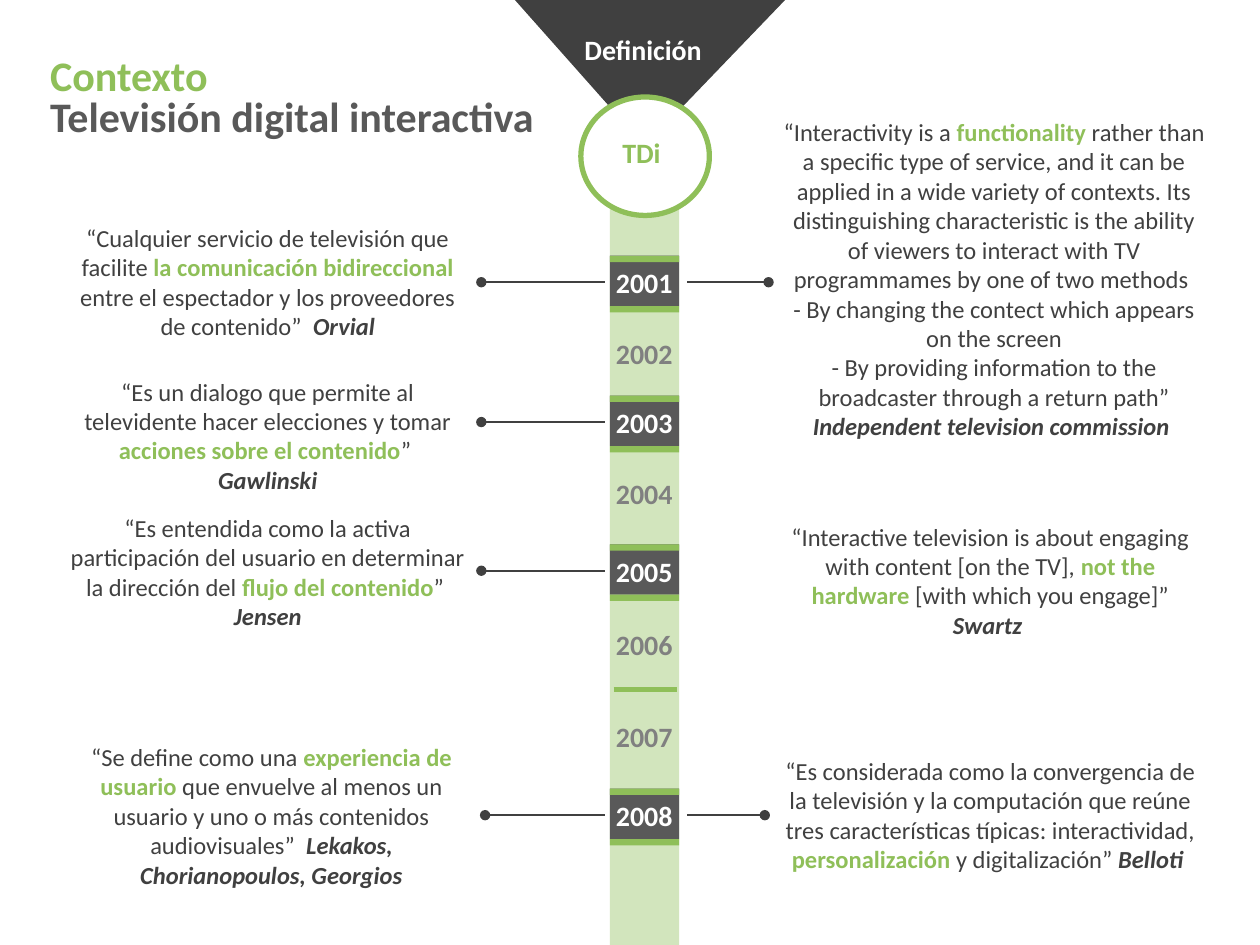
from dataclasses import dataclass
from typing import Optional

from lxml import etree
from pptx import Presentation
from pptx import util as u
from pptx.dml.color import RGBColor
from pptx.enum import shapes, text
from pptx.oxml.ns import qn

GREEN, PALE_GREEN, WHITE = "8FBF59", "D2E5BD", "FFFFFF"
DARK, MEDIUM, GRAY = "404040", "595959", "808080"
FONT = "Calibri"
BAR_LEFT, BAR_WIDTH = 4.84, 0.55
BLOCK_HEIGHT, CAP_HEIGHT = 0.4, 0.05
LEADER_OFFSET = 0.21
LEFT_LEADER_END, RIGHT_LEADER_END = 4.8, 5.45


@dataclass(frozen=True)
class Box:
    left: float
    top: float
    width: float
    height: float

    def lengths(self) -> tuple:
        return tuple(u.Inches(v) for v in (self.left, self.top, self.width, self.height))


@dataclass(frozen=True)
class Run:
    words: str
    color: str = DARK
    size: int = 14
    bold: bool = False
    italic: bool = False


@dataclass(frozen=True)
class Year:
    label: str
    top: float
    highlighted: bool = False


@dataclass(frozen=True)
class Quote:
    box: Box
    paragraphs: list[list[Run]]
    year: Optional[str] = None


def key(words: str) -> Run:
    return Run(words, GREEN, bold=True)


def author(words: str) -> Run:
    return Run(words, bold=True, italic=True)


YEARS = [
    Year("2001", 2.03, True), Year("2002", 2.59), Year("2003", 3.14, True), Year("2004", 3.7),
    Year("2005", 4.32, True), Year("2006", 4.9), Year("2007", 5.63), Year("2008", 6.26, True),
]

QUOTES = [
    Quote(Box(0.43, 1.72, 3.39, 1.04), [[
        Run("“Cualquier servicio de televisión que facilite "), key("la comunicación bidireccional "),
        Run("entre el espectador y los proveedores de contenido”  "), author("Orvial")]], "2001"),
    Quote(Box(0.43, 2.94, 3.39, 0.81), [[
        Run("“Es un dialogo que permite al televidente hacer elecciones y tomar "),
        key("acciones sobre el contenido"), Run("”  "), author("Gawlinski")]], "2003"),
    Quote(Box(0.43, 4.02, 3.39, 1.04), [[
        Run("“Es entendida como la activa participación del usuario en determinar la dirección del "),
        key("flujo del contenido"), Run("”  "), author("Jensen")]], "2005"),
    Quote(Box(0.46, 5.84, 3.39, 1.28), [[
        Run("“Se define como una "), key("experiencia de usuario "),
        Run("que envuelve al menos un usuario y uno o más contenidos audiovisuales”  "),
        author("Lekakos, Chorianopoulos, Georgios")]], "2008"),
    Quote(Box(6.1, 0.88, 3.58, 2.69), [
        [Run("“Interactivity is a "), key("functionality"),
         Run(" rather than a specific type of service, and it can be applied in a wide variety of "
             "contexts. Its distinguishing characteristic is the ability of viewers to interact "
             "with TV programmames by one of two methods ")],
        [Run("- By changing the contect which appears on the screen")],
        [Run("- By providing information to the broadcaster through a return path” "),
         author("Independent television commission ")]], "2001"),
    Quote(Box(6.07, 4.09, 3.58, 1.04), [[
        Run("“Interactive television is about engaging with content [on the TV], "),
        key("not the hardware"), Run(" [with which you engage]” "), author("Swartz ")]]),
    Quote(Box(6.07, 5.95, 3.58, 1.04), [[
        Run("“Es considerada como la convergencia de la televisión y la computación que reúne "
            "tres características típicas: interactividad, "),
        key("personalización "), Run("y digitalización” "), author("Belloti ")]], "2008"),
]


def rgb(color: str) -> RGBColor:
    return RGBColor.from_string(color)


def add_block(slide, kind, box: Box, fill: str, outline: Optional[str] = None):
    shape = slide.shapes.add_shape(kind, *box.lengths())
    shape.shadow.inherit = False
    shape.fill.solid()
    shape.fill.fore_color.rgb = rgb(fill)
    if outline:
        shape.line.color.rgb = rgb(outline)
        shape.line.width = u.Pt(3)
    else:
        shape.line.fill.background()
    return shape


def add_words(slide, box: Box, paragraphs: list[list[Run]], wrap: bool = True,
              align=text.PP_ALIGN.LEFT):
    frame = slide.shapes.add_textbox(*box.lengths()).text_frame
    frame.word_wrap = wrap
    frame.auto_size = text.MSO_AUTO_SIZE.SHAPE_TO_FIT_TEXT
    for index, runs in enumerate(paragraphs):
        paragraph = frame.add_paragraph() if index else frame.paragraphs[0]
        paragraph.alignment = align
        for item in runs:
            run = paragraph.add_run()
            run.text = item.words
            run.font.name = FONT
            run.font.size = u.Pt(item.size)
            run.font.bold = item.bold
            run.font.italic = item.italic
            run.font.color.rgb = rgb(item.color)
    return frame


def add_line(slide, kind, start: float, end: float, y: float, color: str, width: float,
             dot: bool = False) -> None:
    line = slide.shapes.add_connector(kind, *(u.Inches(v) for v in (start, y, end, y)))
    line.line.color.rgb = rgb(color)
    line.line.width = u.Pt(width)
    if dot:
        etree.SubElement(line.line._get_or_add_ln(), qn("a:headEnd"), type="oval")
    etree.SubElement(line._element.spPr, qn("a:effectLst"))


def add_header(slide) -> None:
    title = add_words(slide, Box(0.3, 0.75, 5.25, 0.39),
                      [[Run("Televisión digital interactiva", MEDIUM, 24, True)]])
    title.auto_size = text.MSO_AUTO_SIZE.NONE
    title.vertical_anchor = text.MSO_ANCHOR.MIDDLE
    title.paragraphs[0].line_spacing = 0.9
    add_words(slide, Box(0.3, 0.34, 2.1, 0.5), [[Run("Contexto", GREEN, 24, True)]])
    funnel = add_block(slide, shapes.MSO_SHAPE.ISOSCELES_TRIANGLE, Box(4.06, -0.03, 2.2, 1.19), DARK)
    funnel.adjustments[0] = 0.52
    funnel.rotation = 180
    add_block(slide, shapes.MSO_SHAPE.OVAL, Box(4.61, 0.77, 1.02, 0.94), WHITE, GREEN)
    add_words(slide, Box(4.54, 0.21, 1.15, 0.37), [[Run("Definición", WHITE, 16, True)]], False)
    add_words(slide, Box(4.84, 1.03, 0.51, 0.37), [[Run("TDi", GREEN, 16, True)]], False)


def add_year(slide, year: Year) -> None:
    rectangle = shapes.MSO_SHAPE.RECTANGLE
    if year.highlighted:
        add_block(slide, rectangle, Box(BAR_LEFT, year.top, BAR_WIDTH, BLOCK_HEIGHT), MEDIUM)
        for top in (year.top, year.top + BLOCK_HEIGHT):
            add_block(slide, rectangle, Box(BAR_LEFT, top, BAR_WIDTH, CAP_HEIGHT), GREEN)
    color = WHITE if year.highlighted else GRAY
    add_words(slide, Box(4.79, year.top + 0.03, 0.66, 0.37), [[Run(year.label, color, 16, True)]], False)


def add_quote(slide, quote: Quote, year_tops: dict[str, float]) -> None:
    box = quote.box
    add_words(slide, box, quote.paragraphs, align=text.PP_ALIGN.CENTER)
    if quote.year:
        on_left = box.left < BAR_LEFT
        start = box.left + box.width if on_left else box.left
        end = LEFT_LEADER_END if on_left else RIGHT_LEADER_END
        add_line(slide, shapes.MSO_CONNECTOR.ELBOW, start, end,
                 year_tops[quote.year] + LEADER_OFFSET, DARK, 1, dot=True)


def main() -> None:
    """Build the timeline of interactive television definitions."""
    presentation = Presentation()
    presentation.slide_width, presentation.slide_height = u.Inches(10), u.Inches(7.5)
    slide = presentation.slides.add_slide(presentation.slide_layouts[6])
    add_block(slide, shapes.MSO_SHAPE.RECTANGLE, Box(BAR_LEFT, 0.77, BAR_WIDTH, 6.73), PALE_GREEN)
    add_header(slide)
    for year in YEARS:
        add_year(slide, year)
    add_line(slide, shapes.MSO_CONNECTOR.STRAIGHT, 4.87, 5.37, 5.47, GREEN, 3)
    year_tops = {year.label: year.top for year in YEARS}
    for quote in QUOTES:
        add_quote(slide, quote, year_tops)
    presentation.save("out.pptx")


if __name__ == "__main__":
    main()
